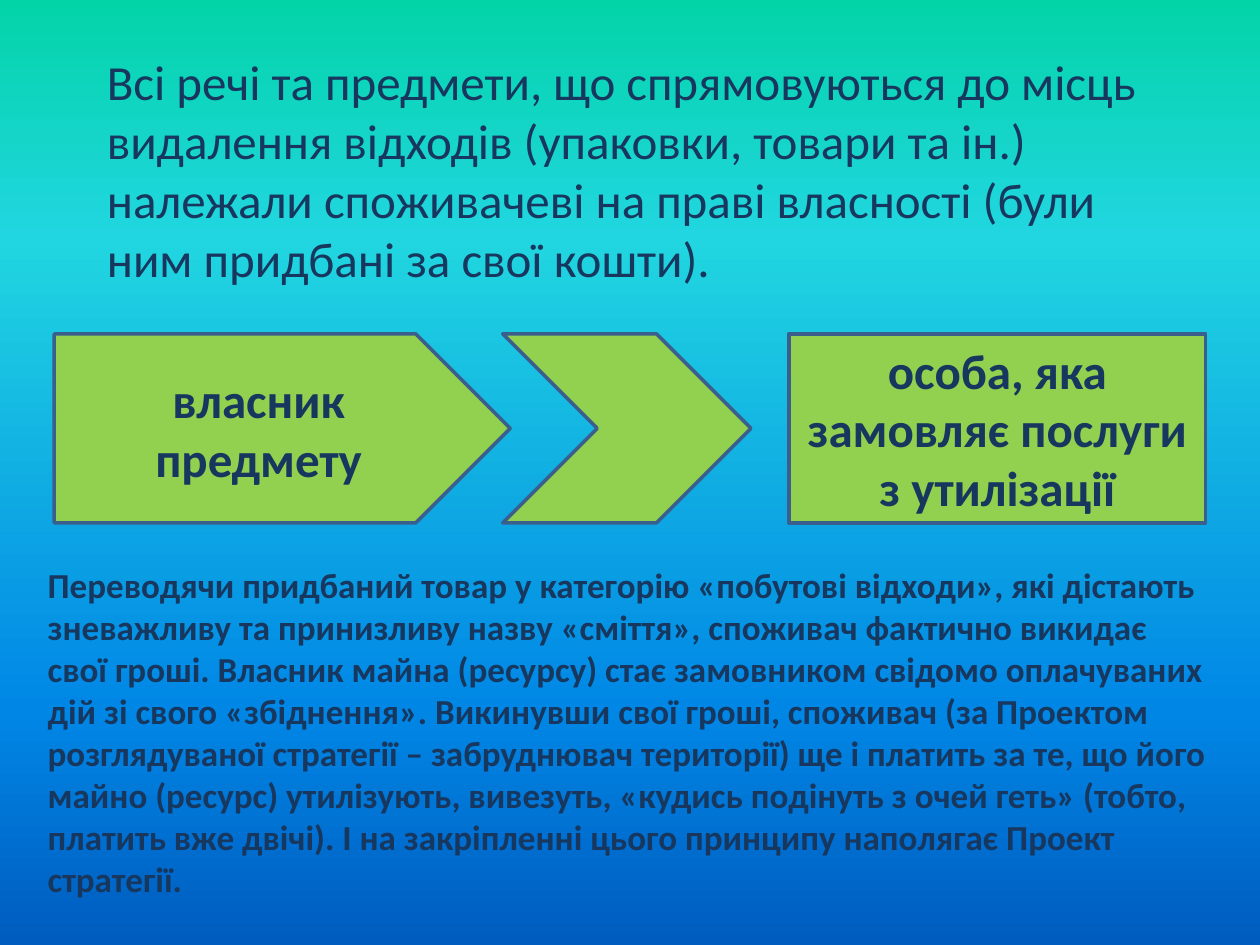
import pptx
import pptx.dml.color
import pptx.enum.shapes
import pptx.enum.text
import pptx.oxml.ns
import pptx.util
from lxml import etree
from pptx.util import Inches

ALIGN = pptx.enum.text.PP_ALIGN
ANCHOR = pptx.enum.text.MSO_ANCHOR
SHAPE = pptx.enum.shapes.MSO_SHAPE


def color(hex_value):
    return pptx.dml.color.RGBColor.from_string(hex_value)


def write(shape, text, size, bold, align, anchor):
    frame = shape.text_frame
    frame.word_wrap = True
    frame.vertical_anchor = anchor
    para = frame.paragraphs[0]
    para.alignment = align
    span = para.add_run()
    span.text = text
    span.font.name = "Calibri"
    span.font.size = pptx.util.Pt(size)
    span.font.bold = bold
    span.font.color.rgb = color("17375E")


deck = pptx.Presentation()
deck.slide_width = Inches(10)
deck.slide_height = Inches(7.5)
page = deck.slides.add_slide(deck.slide_layouts[6])

# Background: four-stop gradient running from top to bottom
background = page.background.fill
background.gradient()
background.gradient_angle = 270
qn = pptx.oxml.ns.qn
stop_list = page.element.find(".//" + qn("a:gsLst"))
for stop in list(stop_list):
    stop_list.remove(stop)
for percent, hex_value in [(0, "03D4A8"), (25, "21D6E0"), (75, "0087E6"), (100, "005CBF")]:
    stop = etree.SubElement(stop_list, qn("a:gs"), pos=str(percent * 1000))
    etree.SubElement(stop, qn("a:srgbClr"), val=hex_value)

intro = page.shapes.add_textbox(Inches(0.75), Inches(0.36), Inches(8.5), Inches(1.97))
write(
    intro,
    "Всі речі та предмети, що спрямовуються до місць видалення відходів "
    "(упаковки, товари та ін.) належали споживачеві на праві власності "
    "(були ним придбані за свої кошти).",
    28, False, ALIGN.LEFT, ANCHOR.BOTTOM,
)

# Row of shapes: owner, arrow, customer
steps = [
    (SHAPE.PENTAGON, 0.43, 3.62, "власник предмету"),
    (SHAPE.CHEVRON, 3.99, 1.97, None),
    (SHAPE.RECTANGLE, 6.26, 3.31, "особа, яка замовляє послуги з утилізації"),
]
for kind, left, width, label in steps:
    step = page.shapes.add_shape(kind, Inches(left), Inches(2.65), Inches(width), Inches(1.5))
    step.shadow.inherit = False
    step.fill.solid()
    step.fill.fore_color.rgb = color("92D050")
    step.line.color.rgb = color("3A5F8C")
    step.line.width = pptx.util.Pt(2)
    if label:
        write(step, label, 28, True, ALIGN.CENTER, ANCHOR.MIDDLE)

conclusion = page.shapes.add_textbox(Inches(0.28), Inches(4.42), Inches(9.45), Inches(3.1))
write(
    conclusion,
    "Переводячи придбаний товар у категорію «побутові відходи», які дістають "
    "зневажливу та принизливу назву «сміття», споживач фактично викидає свої гроші. "
    "Власник майна (ресурсу) стає замовником свідомо оплачуваних дій зі свого "
    "«збіднення». Викинувши свої гроші, споживач (за Проектом розглядуваної стратегії "
    "– забруднювач території) ще і платить за те, що його майно (ресурс) утилізують, "
    "вивезуть, «кудись подінуть з очей геть» (тобто, платить вже двічі). "
    "І на закріпленні цього принципу наполягає Проект стратегії.",
    20, True, ALIGN.LEFT, ANCHOR.TOP,
)
conclusion.text_frame.auto_size = pptx.enum.text.MSO_AUTO_SIZE.SHAPE_TO_FIT_TEXT

deck.save("out.pptx")
